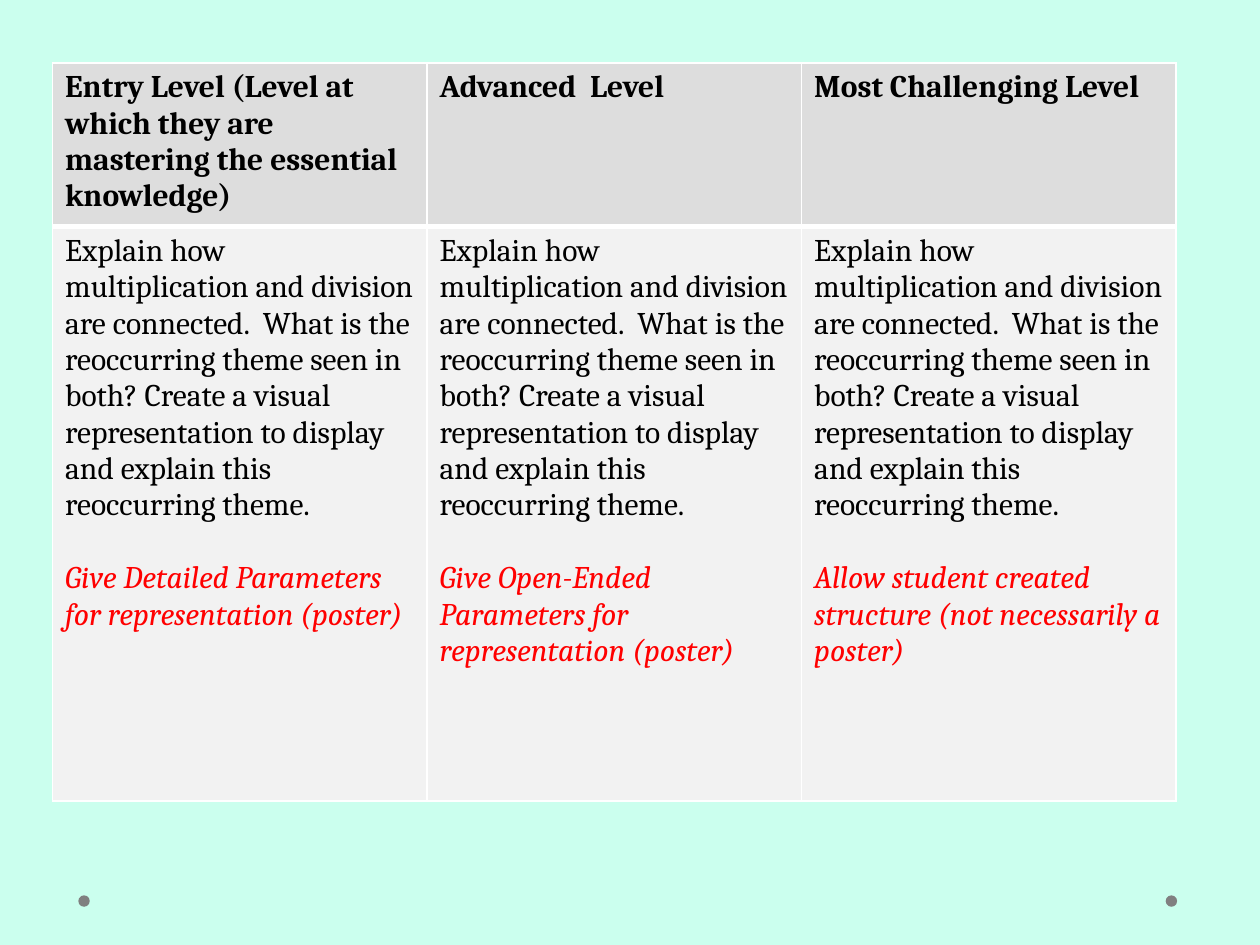
from lxml import etree
from pptx import Presentation
from pptx.dml.color import RGBColor
from pptx.enum.shapes import MSO_SHAPE
from pptx.oxml.ns import qn
from pptx.util import Cm, Pt

OVAL = MSO_SHAPE.OVAL
FONT = "Cambria"
BLANK_LAYOUT = 6
TASK = (
    "Explain how multiplication and division are connected.  What is the "
    "reoccurring theme seen in both? Create a visual representation to display "
    "and explain this reoccurring theme."
)
LEVELS = [
    ("Entry Level (Level at which they are mastering the essential knowledge)",
     "Give Detailed Parameters for representation (poster)"),
    ("Advanced  Level",
     "Give Open-Ended Parameters for representation (poster)"),
    ("Most Challenging Level",
     "Allow student created structure (not necessarily a poster)"),
]


def color(value):
    return RGBColor.from_string(value)


def set_paint(target, value):
    target.solid()
    target.fore_color.rgb = color(value)


def set_borders(cell, widths):
    properties = cell._tc.get_or_add_tcPr()
    for side, width in zip("LRTB", widths):
        line = etree.SubElement(properties, qn(f"a:ln{side}"), w=str(Pt(width)))
        fill = etree.SubElement(line, qn("a:solidFill"))
        etree.SubElement(fill, qn("a:srgbClr"), val="FFFFFF")


def write_paragraph(paragraph, text, text_color="000000", bold=False, italic=False):
    paragraph.text = text
    for run in paragraph.runs:
        font = run.font
        font.name = FONT
        font.size = Pt(18)
        font.bold = bold
        font.italic = italic
        font.color.rgb = color(text_color)


def style_cell(cell, fill, border_widths):
    set_borders(cell, border_widths)
    set_paint(cell.fill, fill)


def add_level_table(slide):
    table = slide.shapes.add_table(
        2, len(LEVELS), Cm(1.06), Cm(1.27), Cm(22.65), Cm(14.88)
    ).table
    table.rows[0].height = Cm(3.3)
    table.rows[1].height = Cm(11.58)
    for column, (heading, instruction) in enumerate(LEVELS):
        table.columns[column].width = Cm(7.55)
        header, body = table.cell(0, column), table.cell(1, column)
        style_cell(header, "DDDDDD", (1, 1, 1, 3))
        style_cell(body, "F2F2F2", (1, 1, 3, 1))
        write_paragraph(header.text_frame.paragraphs[0], heading, bold=True)
        write_paragraph(body.text_frame.paragraphs[0], TASK)
        paragraph = body.text_frame.add_paragraph()
        paragraph.space_before = Pt(20.8)
        write_paragraph(paragraph, instruction, "FF0000", italic=True)


def add_dot(slide, left):
    shape = slide.shapes.add_shape(OVAL, left, Cm(18.05), Cm(0.23), Cm(0.23))
    shape.shadow.inherit = False
    set_paint(shape.fill, "808080")
    shape.line.fill.background()


def main():
    presentation = Presentation()
    presentation.slide_width = Cm(25.4)
    presentation.slide_height = Cm(19.05)
    slide = presentation.slides.add_slide(presentation.slide_layouts[BLANK_LAYOUT])
    set_paint(slide.background.fill, "CBFFEE")
    for left in (Cm(1.58), Cm(23.5)):
        add_dot(slide, left)
    add_level_table(slide)
    presentation.save("out.pptx")


if __name__ == "__main__":
    main()
